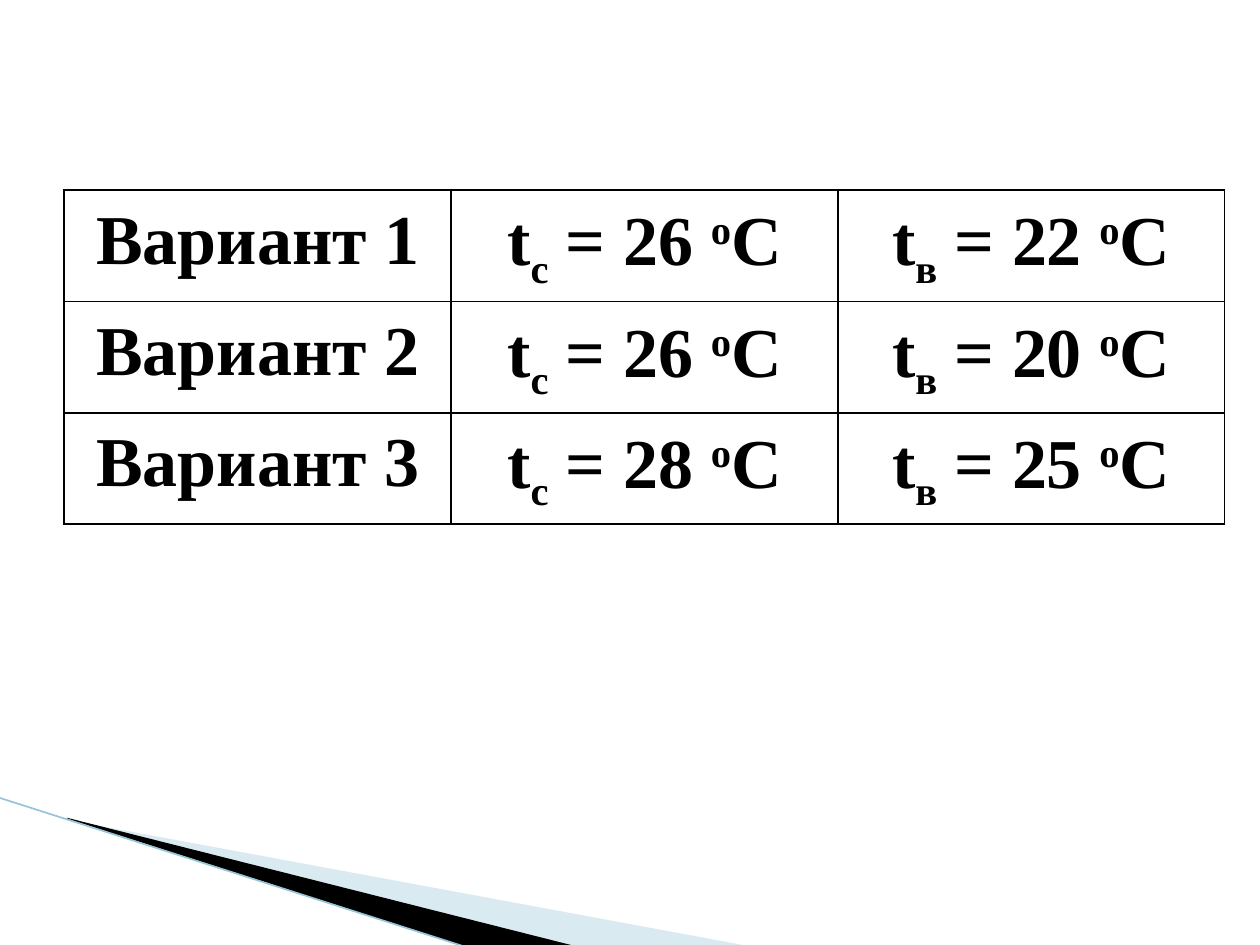
from lxml import etree
from pptx import Presentation
from pptx import util as u
from pptx.dml.color import RGBColor
from pptx.enum import shapes, text
from pptx.oxml import ns

BLACK = RGBColor(0x00, 0x00, 0x00)
PALE_BLUE = RGBColor(0xA0, 0xCB, 0xDC)
LINE_BLUE = RGBColor(0x97, 0xC5, 0xD8)

SUBSCRIPT, SUPERSCRIPT = "-25000", "30000"
TEXT_FORMAT = {"name": "Times New Roman", "size": u.Pt(40), "bold": True}
CELL_FORMAT = {
    "margin_left": u.Inches(0.07),
    "margin_right": u.Inches(0.07),
    "margin_top": 0,
    "margin_bottom": 0,
}
PARAGRAPH_FORMAT = {"alignment": text.PP_ALIGN.CENTER, "line_spacing": 1.15}
VARIANTS = [(26, 22), (26, 20), (28, 25)]


def set_attributes(target, values):
    """Set every attribute named in a dict of format values."""
    for name, value in values.items():
        setattr(target, name, value)


def add_child(parent, tag, **attributes):
    """Append a DrawingML element and return it."""
    return etree.SubElement(parent, ns.qn(tag), attributes)


def add_wedge(slide, left, top, points, color, opacity=None):
    """Draw a filled polygon from points relative to a corner."""
    corners = [(left + u.Inches(x), top + u.Inches(y)) for x, y in points]
    builder = slide.shapes.build_freeform(*corners[0], scale=1.0)
    builder.add_line_segments(corners[1:], close=True)
    wedge = builder.convert_to_shape()
    wedge.shadow.inherit = False
    wedge.fill.solid()
    wedge.fill.fore_color.rgb = color
    wedge.line.fill.background()
    if opacity is not None:
        color_element = wedge.fill._xPr.find(".//" + ns.qn("a:srgbClr"))
        add_child(color_element, "a:alpha", val=str(opacity * 1000))


def add_corner_decoration(slide, left, top):
    """Draw the two wedges and the edge line at the bottom left."""
    pale_points = [(0.55, 0.18), (5.95, 1.18), (4.56, 1.18), (0.55, 0.17)]
    black_points = [(0.53, 0.16), (4.57, 1.18), (3.72, 1.19), (0.54, 0.17)]
    add_wedge(slide, left, top, pale_points, PALE_BLUE, opacity=40)
    add_wedge(slide, left, top, black_points, BLACK)
    edge = slide.shapes.add_connector(
        shapes.MSO_CONNECTOR.STRAIGHT,
        left - u.Inches(0.01), top,
        left + u.Inches(3.71), top + u.Inches(1.19),
    )
    edge.line.color.rgb = LINE_BLUE
    edge.line.width = u.Pt(0.95)
    add_child(edge._element.spPr, "a:effectLst")


def set_borders(cell):
    """Give a cell thin black borders on all sides."""
    properties = cell._tc.get_or_add_tcPr()
    for index, side in enumerate(("a:lnL", "a:lnR", "a:lnT", "a:lnB")):
        border = etree.Element(ns.qn(side), w=str(u.Pt(1)))
        fill = add_child(border, "a:solidFill")
        add_child(fill, "a:srgbClr", val=str(BLACK))
        properties.insert(index, border)


def fill_cell(cell, parts):
    """Write (text, baseline) parts into a formatted cell."""
    set_attributes(cell, CELL_FORMAT)
    cell.fill.background()
    set_borders(cell)
    paragraph = cell.text_frame.paragraphs[0]
    set_attributes(paragraph, PARAGRAPH_FORMAT)
    for content, baseline in parts:
        run = paragraph.add_run()
        run.text = content
        set_attributes(run.font, TEXT_FORMAT)
        run.font.color.rgb = BLACK
        if baseline:
            run.font._element.set("baseline", baseline)


def temperature(index, degrees):
    """Return the parts of one temperature equation."""
    return [
        ("t", None), (index, SUBSCRIPT), (f" = {degrees} ", None),
        ("о", SUPERSCRIPT), ("С", None),
    ]


def add_variant_table(slide, left, top, width, height):
    """Add the table of variants with their two temperatures."""
    frame = slide.shapes.add_table(len(VARIANTS), 3, left, top, width, height)
    table = frame.table
    table.first_row = False
    table.horz_banding = False
    for row, (number, (dry, wet)) in zip(table.rows, enumerate(VARIANTS, 1)):
        contents = (
            [(f"Вариант {number}", None)],
            temperature("с", dry),
            temperature("в", wet),
        )
        for cell, parts in zip(row.cells, contents):
            fill_cell(cell, parts)


def main():
    """Build and save the presentation."""
    presentation = Presentation()
    presentation.slide_width = u.Inches(10)
    presentation.slide_height = u.Inches(7.5)
    slide = presentation.slides.add_slide(presentation.slide_layouts[6])
    add_corner_decoration(slide, u.Inches(0), u.Inches(6.33))
    add_variant_table(
        slide, u.Inches(0.51), u.Inches(1.51), u.Inches(9.21), u.Inches(2.65)
    )
    presentation.save("out.pptx")


if __name__ == "__main__":
    main()
